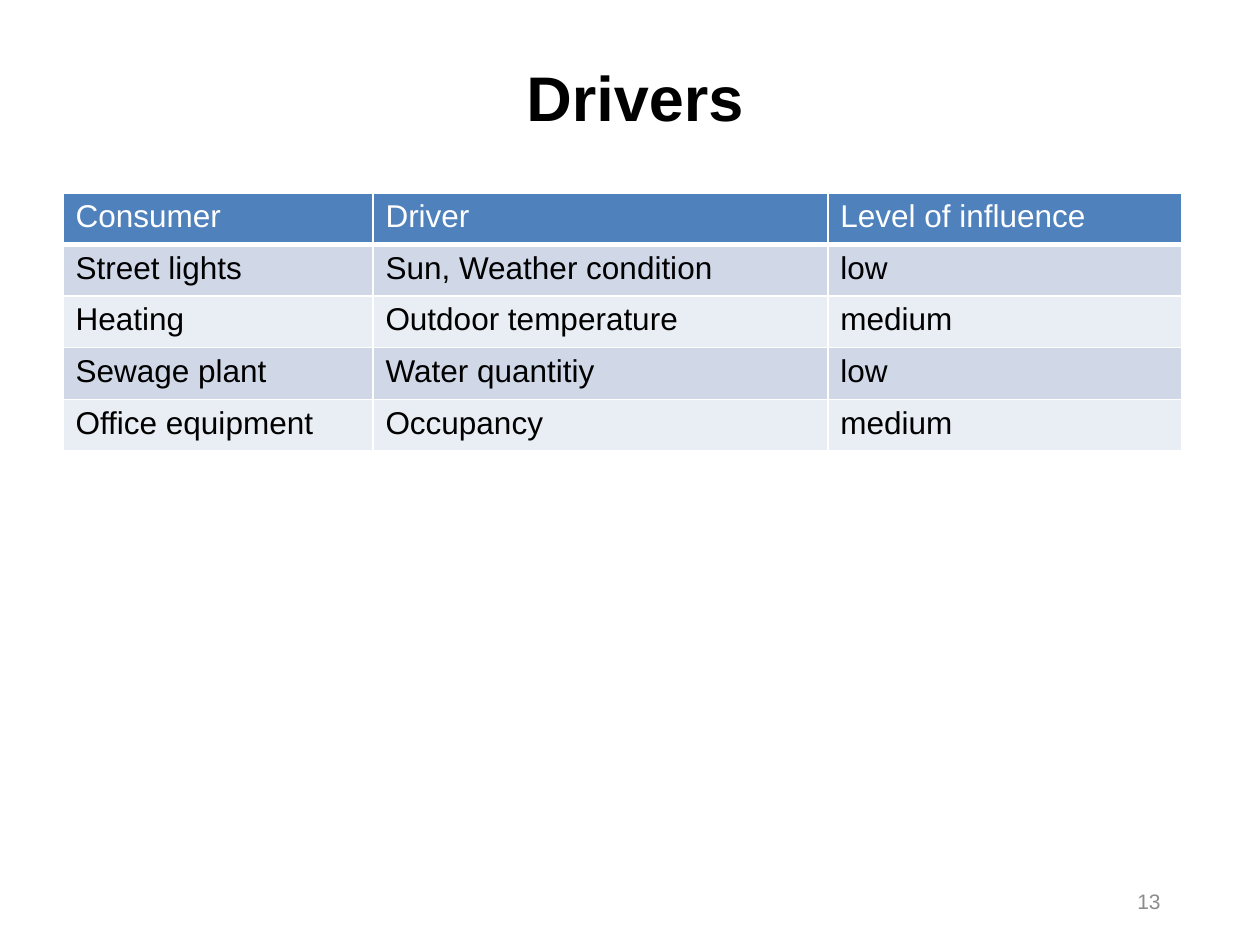
from lxml.etree import SubElement
from pptx import Presentation
from pptx.dml.color import RGBColor
from pptx.enum.text import MSO_ANCHOR, PP_ALIGN
from pptx.oxml.ns import qn
from pptx.util import Inches, Pt

BLACK = RGBColor(0x00, 0x00, 0x00)
WHITE = RGBColor(0xFF, 0xFF, 0xFF)
GREY = RGBColor(0x8C, 0x8C, 0x8C)
BLUE = RGBColor(0x4F, 0x81, 0xBD)
BANDS = (RGBColor(0xD0, 0xD8, 0xE8), RGBColor(0xE9, 0xED, 0xF4))

ROWS = [
    ("Consumer", "Driver", "Level of influence"),
    ("Street lights", "Sun, Weather condition", "low"),
    ("Heating", "Outdoor temperature", "medium"),
    ("Sewage plant", "Water quantitiy", "low"),
    ("Office equipment", "Occupancy", "medium"),
]


def write(frame, text, font="Arial", size=18, color=BLACK, bold=False,
          align=PP_ALIGN.LEFT):
    """Put one formatted line of text in a frame."""
    para = frame.paragraphs[0]
    para.alignment = align
    run = para.add_run()
    run.text = text
    run.font.name = font
    run.font.size = Pt(size)
    run.font.bold = bold
    run.font.color.rgb = color


def edge(cell, side, width, color=WHITE):
    """Draw one border of a cell; side is L, R, T or B."""
    line = SubElement(cell._tc.get_or_add_tcPr(), qn("a:ln" + side),
                      w=str(Pt(width)))
    fill = SubElement(line, qn("a:solidFill"))
    SubElement(fill, qn("a:srgbClr"), val=str(color))


class Deck:
    def __init__(self, font="Arial"):
        self.font = font
        self.file = Presentation()
        self.file.slide_width = Inches(10)
        self.file.slide_height = Inches(7.5)
        self.slide = self.file.slides.add_slide(self.file.slide_layouts[6])

    def label(self, text, left, top, width, height, inset=(0.1, 0.05),
              **style):
        box = self.slide.shapes.add_textbox(
            Inches(left), Inches(top), Inches(width), Inches(height))
        frame = box.text_frame
        frame.word_wrap = True
        frame.vertical_anchor = MSO_ANCHOR.MIDDLE
        frame.margin_left = frame.margin_right = Inches(inset[0])
        frame.margin_top = frame.margin_bottom = Inches(inset[1])
        write(frame, text, font=self.font, **style)

    def table(self, rows, left, top, widths, height):
        grid = self.slide.shapes.add_table(
            len(rows), len(widths), Inches(left), Inches(top),
            Inches(sum(widths)), Inches(height * len(rows))).table
        for col, width in zip(grid.columns, widths):
            col.width = Inches(width)
        for r, row in enumerate(rows):
            head = r == 0
            for c, text in enumerate(row):
                cell = grid.cell(r, c)
                for side in "LRTB":
                    edge(cell, side, 3 if head and side == "B" else 1)
                cell.fill.solid()
                cell.fill.fore_color.rgb = BLUE if head else BANDS[(r - 1) % 2]
                write(cell.text_frame, text, font=self.font,
                      color=WHITE if head else BLACK)


def main():
    deck = Deck()

    # Title
    deck.label("Drivers", 0.5, 0.37, 9.08, 0.79, inset=(0, 0),
               size=36, bold=True, align=PP_ALIGN.CENTER)

    # Table of consumers and their drivers
    deck.table(ROWS, 0.5, 1.53, (2.46, 3.61, 2.81), 0.41)

    # Page number
    deck.label("13", 7.06, 6.95, 2.25, 0.4,
               size=12, color=GREY, align=PP_ALIGN.RIGHT)

    deck.file.save("out.pptx")


if __name__ == "__main__":
    main()
